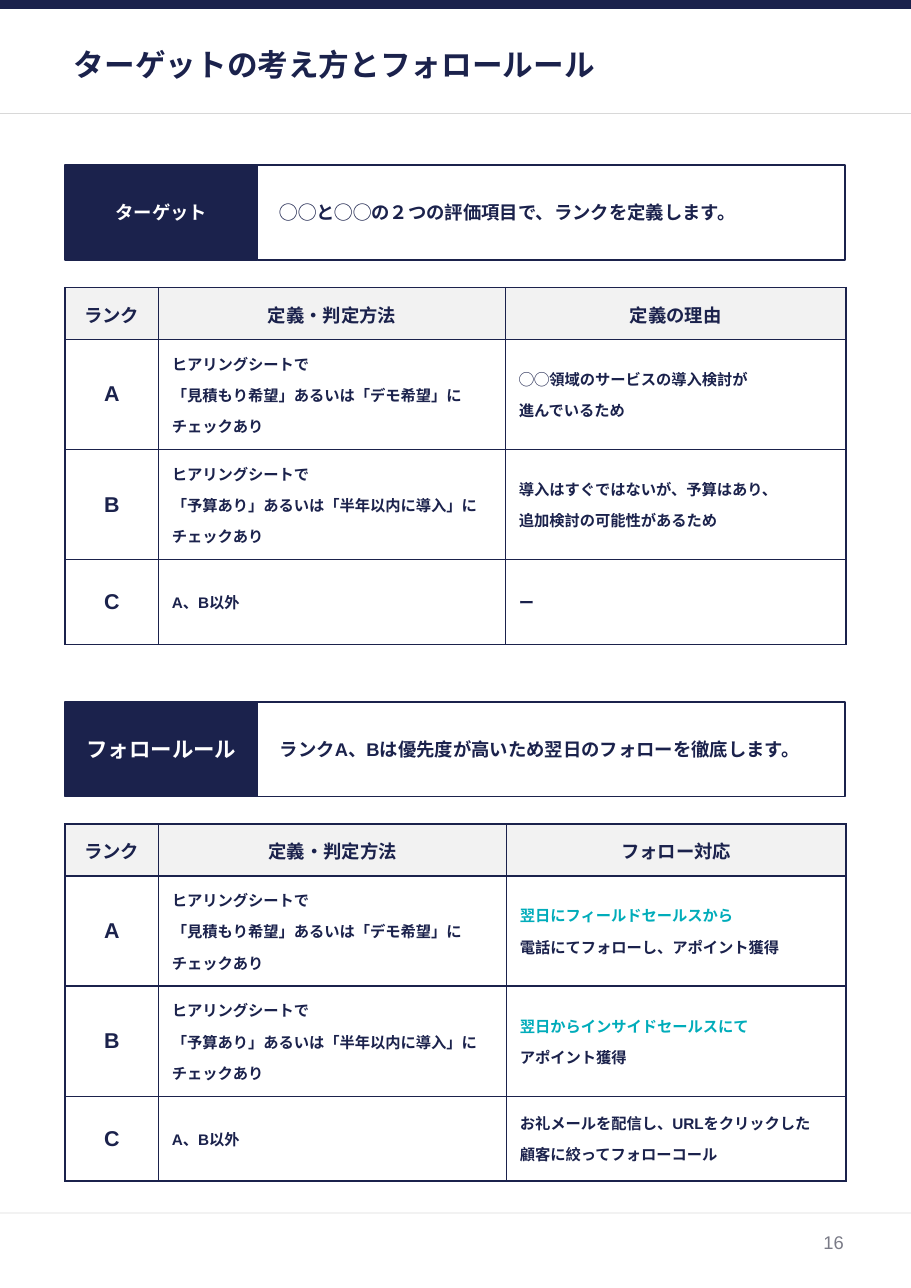
from dataclasses import dataclass

from lxml.etree import SubElement
from pptx import Presentation
from pptx.dml.color import RGBColor as Color
from pptx.enum.shapes import MSO_CONNECTOR as Connector, MSO_SHAPE as Shape
from pptx.enum.text import MSO_ANCHOR as Anchor, PP_ALIGN as Align
from pptx.oxml import parse_xml
from pptx.oxml.ns import nsdecls, qn
from pptx.util import Inches, Pt


@dataclass(frozen=True)
class Theme:
    font: str = "Arial"
    navy: str = "1B224C"
    teal: str = "00ACBA"
    white: str = "FFFFFF"
    header: str = "F2F2F2"
    rule: str = "D8D8D8"
    number: str = "7A7B87"
    title_size: int = 20
    large: int = 14
    medium: int = 12
    small: int = 10
    border: int = 1


class RulePage:
    def __init__(self, page, theme):
        self.page = page
        self.theme = theme

    def fill_text(self, frame, lines, size, color=None, align=Align.LEFT,
                  bold=True, gap=0, accents=()):
        for index, line in enumerate(lines):
            para = frame.paragraphs[0] if index == 0 else frame.add_paragraph()
            para.text = line
            para.alignment = align
            para.space_before = Pt(gap if index else 0)
            para.space_after = Pt(gap)
            font = para.font
            font.name = self.theme.font
            font.size = Pt(size)
            font.bold = bold
            shade = self.theme.teal if line in accents else color or self.theme.navy
            font.color.rgb = Color.from_string(shade)

    def set_frame(self, frame, left_margin=0.04):
        frame.word_wrap = True
        frame.vertical_anchor = Anchor.MIDDLE
        frame.margin_left = Inches(left_margin)
        frame.margin_right = frame.margin_top = frame.margin_bottom = Inches(0.04)

    def text(self, left, top, width, height, line, size, **style):
        box = self.page.shapes.add_textbox(*map(Inches, (left, top, width, height)))
        self.set_frame(box.text_frame)
        self.fill_text(box.text_frame, [line], size, **style)

    def bar(self, left, top, width, height, fill, outlined=True):
        bar = self.page.shapes.add_shape(
            Shape.RECTANGLE, *map(Inches, (left, top, width, height)))
        bar.shadow.inherit = False
        bar.fill.solid()
        bar.fill.fore_color.rgb = Color.from_string(fill)
        if outlined:
            bar.line.color.rgb = Color.from_string(self.theme.navy)
            bar.line.width = Pt(self.theme.border)
        else:
            bar.line.fill.background()
        return bar

    def rule(self, top, width, color):
        rule = self.page.shapes.add_connector(
            Connector.STRAIGHT, 0, Inches(top), Inches(width), Inches(top))
        rule.line.color.rgb = Color.from_string(color)
        rule.line.width = Pt(0.75)
        SubElement(rule._element.spPr, qn("a:effectLst"))

    def banner(self, top, label, label_size, message):
        theme = self.theme
        body = self.bar(2.34, top, 5.33, 0.86, theme.white)
        self.set_frame(body.text_frame, 0.2)
        self.fill_text(body.text_frame, [message], theme.medium)
        tag = self.bar(0.59, top, 1.75, 0.86, theme.navy)
        self.set_frame(tag.text_frame)
        self.fill_text(tag.text_frame, [label], label_size, theme.white, Align.CENTER)

    def style_cell(self, cell, fill):
        cell.fill.solid()
        cell.fill.fore_color.rgb = Color.from_string(fill)
        cell.vertical_anchor = Anchor.MIDDLE
        cell.margin_left = cell.margin_right = Inches(0.12)
        cell.margin_top = cell.margin_bottom = Inches(0.12)
        properties = cell._tc.get_or_add_tcPr()
        for index, side in enumerate(("lnL", "lnR", "lnT", "lnB")):
            properties.insert(index, parse_xml(
                f'<a:{side} {nsdecls("a")} w="{Pt(self.theme.border)}"><a:solidFill>'
                f'<a:srgbClr val="{self.theme.navy}"/></a:solidFill></a:{side}>'))

    def table(self, top, widths, heights, rows, accents=()):
        theme = self.theme
        table = self.page.shapes.add_table(
            len(rows), len(widths), Inches(0.59), Inches(top),
            Inches(sum(widths)), Inches(sum(heights))).table
        table.first_row = table.horz_banding = False
        for column, width in zip(table.columns, widths):
            column.width = Inches(width)
        for row, height in zip(table.rows, heights):
            row.height = Inches(height)
        for r, row in enumerate(rows):
            for c, content in enumerate(row):
                cell = table.cell(r, c)
                self.style_cell(cell, theme.white if r else theme.header)
                lines = content.split("\n")
                if r == 0 or c == 0:
                    size = theme.large if r else theme.medium
                    self.fill_text(cell.text_frame, lines, size, align=Align.CENTER)
                else:
                    self.fill_text(cell.text_frame, lines, theme.small,
                                   gap=3, accents=accents)


DEFINITIONS = [
    ("ランク", "定義・判定方法"),
    ("A", "ヒアリングシートで\n「見積もり希望」あるいは「デモ希望」に\nチェックあり"),
    ("B", "ヒアリングシートで\n「予算あり」あるいは「半年以内に導入」に\nチェックあり"),
    ("C", "A、B以外"),
]
REASONS = [
    "定義の理由",
    "◯◯領域のサービスの導入検討が\n進んでいるため",
    "導入はすぐではないが、予算はあり、\n追加検討の可能性があるため",
    "ー",
]
FOLLOW_UPS = [
    "フォロー対応",
    "翌日にフィールドセールスから\n電話にてフォローし、アポイント獲得",
    "翌日からインサイドセールスにて\nアポイント獲得",
    "お礼メールを配信し、URLをクリックした\n顧客に絞ってフォローコール",
]
URGENT = ("翌日にフィールドセールスから", "翌日からインサイドセールスにて")
ROW_HEIGHTS = (0.47, 1, 1, 0.77)
PAGE_WIDTH, PAGE_HEIGHT = 8.27, 11.69


def with_last_column(column):
    return [(*row, last) for row, last in zip(DEFINITIONS, column)]


def main():
    deck = Presentation()
    deck.slide_width = Inches(PAGE_WIDTH)
    deck.slide_height = Inches(PAGE_HEIGHT)
    theme = Theme()
    sheet = RulePage(deck.slides.add_slide(deck.slide_layouts[6]), theme)

    sheet.bar(0, 0, PAGE_WIDTH, 0.08, theme.navy, outlined=False)
    sheet.rule(11.01, PAGE_WIDTH, theme.header)
    sheet.rule(1.03, PAGE_WIDTH, theme.rule)
    sheet.text(0.63, 0.35, 7.09, 0.47, "ターゲットの考え方とフォロールール", theme.title_size)
    sheet.text(5.84, 11.12, 1.86, 0.31, "16", theme.medium,
               color=theme.number, align=Align.RIGHT, bold=False)

    sheet.table(2.61, (0.85, 3.15, 3.09), ROW_HEIGHTS, with_last_column(REASONS))
    sheet.banner(1.5, "ターゲット", theme.medium,
                 "◯◯と◯◯の２つの評価項目で、ランクを定義します。")
    sheet.table(7.48, (0.85, 3.16, 3.08), ROW_HEIGHTS,
                with_last_column(FOLLOW_UPS), URGENT)
    sheet.banner(6.37, "フォロールール", theme.large,
                 "ランクA、Bは優先度が高いため翌日のフォローを徹底します。")
    deck.save("out.pptx")


if __name__ == "__main__":
    main()
